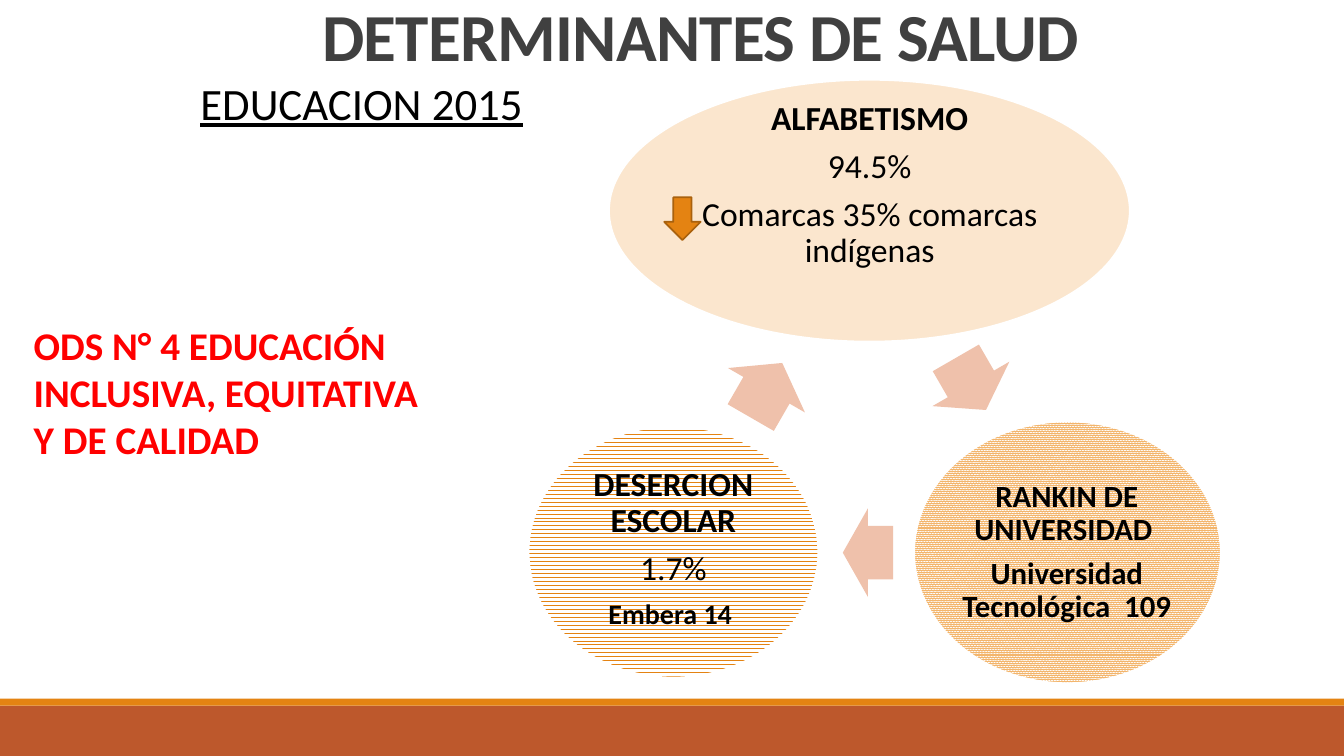
"""Build a slide on education as a determinant of health."""
from pptx import Presentation
from pptx import util as u
from pptx.dml.color import RGBColor
from pptx.enum import dml, shapes, text

FONT = "Calibri"
COLORS = {
    "band": "BD582C", "accent": "E48312", "accent_edge": "A9610D",
    "title": "404040", "ink": "000000", "goal": "FF0000", "white": "FFFFFF",
    "cream": "FBE6CE", "peach": "F3B56C", "cycle": "EFC1AB",
}
TITLE = "DETERMINANTES DE SALUD"
SUBTITLE = "EDUCACION 2015"
GOAL = "ODS N° 4 EDUCACIÓN INCLUSIVA, EQUITATIVA Y DE CALIDAD"

BANDS = [((0, 504, 960, 36), "band"), ((0, 499, 960, 5), "accent")]
TOPICS = [
    {"oval": (435, 57, 372, 187), "color": "cream", "pattern": None,
     "area": (489.5, 70.5, 263.5, 146), "anchor": text.MSO_ANCHOR.TOP,
     "lines": [("ALFABETISMO", 24, True), ("94.5%", 24, False),
               ("Comarcas 35% comarcas indígenas", 24, False)]},
    {"oval": (653, 301, 219, 187), "color": "peach",
     "pattern": dml.MSO_PATTERN.PERCENT_90,
     "area": (684.5, 328.5, 155, 132.5), "anchor": text.MSO_ANCHOR.MIDDLE,
     "lines": [("RANKIN DE UNIVERSIDAD ", 22, True),
               ("Universidad Tecnológica  109", 22, True)]},
    {"oval": (377.5, 304.5, 207, 179.5), "color": "accent",
     "pattern": dml.MSO_PATTERN.WAVE,
     "area": (407.5, 332, 147, 127), "anchor": text.MSO_ANCHOR.TOP,
     "lines": [("DESERCION ESCOLAR", 24, True), ("1.7%", 24, False),
               ("Embera 14 ", 20, True)]},
]
CYCLE_ARROWS = [((672, 242.5, 43, 63.5), 60), ((602, 363, 36, 63.5), 180),
                ((525, 247, 45, 63.5), 300)]
DROP_ARROW = (474.5, 141, 26, 30.5)


def color(name):
    return RGBColor.from_string(COLORS[name])


def points(place):
    return [u.Pt(value) for value in place]


def add_figure(page, preset, place, fill, edge=None, pattern=None):
    figure = page.shapes.add_shape(preset, *points(place))
    figure.shadow.inherit = False
    if pattern is None:
        figure.fill.solid()
    else:
        figure.fill.patterned()
        figure.fill.pattern = pattern
        figure.fill.back_color.rgb = color("white")
    figure.fill.fore_color.rgb = color(fill)
    if edge:
        figure.line.color.rgb = color(edge)
        figure.line.width = u.Pt(1.25)
    else:
        figure.line.fill.background()
    return figure


def add_span(para, words, size, ink, bold=False):
    span = para.add_run()
    span.text = words
    span.font.name = FONT
    span.font.size = u.Pt(size)
    span.font.bold = bold
    span.font.color.rgb = color(ink)
    return span


def add_box(page, place):
    box = page.shapes.add_textbox(*points(place))
    box.text_frame.word_wrap = True
    return box.text_frame


def add_title(page):
    title = page.shapes.title
    title.left, title.top, title.width, title.height = points((104.5, -57, 792, 114.5))
    frame = title.text_frame
    frame.auto_size = text.MSO_AUTO_SIZE.NONE
    frame.vertical_anchor = text.MSO_ANCHOR.BOTTOM
    para = frame.paragraphs[0]
    para.alignment = text.PP_ALIGN.CENTER
    para.line_spacing = 0.85
    para.space_before = u.Pt(0)
    span = add_span(para, TITLE, 48, "title", True)
    span.font._element.set("spc", "-50")


def add_topic(page, topic):
    add_figure(page, shapes.MSO_SHAPE.OVAL, topic["oval"], topic["color"],
               "white", topic["pattern"])
    frame = add_box(page, topic["area"])
    frame.vertical_anchor = topic["anchor"]
    frame.margin_left = frame.margin_right = u.Pt(2)
    frame.margin_top = frame.margin_bottom = u.Pt(2)
    for index, (words, size, bold) in enumerate(topic["lines"]):
        para = frame.add_paragraph() if index else frame.paragraphs[0]
        para.alignment = text.PP_ALIGN.CENTER
        para.line_spacing = 0.9
        para.space_after = u.Pt(round(size * 0.35, 1))
        add_span(para, words, size, "ink", bold)


def main():
    deck = Presentation()
    deck.slide_width, deck.slide_height = u.Pt(960), u.Pt(540)
    page = deck.slides.add_slide(deck.slide_layouts[5])
    for place, fill in BANDS:
        add_figure(page, shapes.MSO_SHAPE.RECTANGLE, place, fill)
    add_title(page)
    for topic in TOPICS:
        add_topic(page, topic)
    for place, angle in CYCLE_ARROWS:
        arrow = add_figure(page, shapes.MSO_SHAPE.RIGHT_ARROW, place, "cycle")
        arrow.rotation = angle
        arrow.adjustments[0] = 0.6
        arrow.adjustments[1] = 0.5
    subtitle = add_box(page, (136, 50.5, 343, 46))
    span = add_span(subtitle.paragraphs[0], SUBTITLE, 32, "ink")
    span.font.underline = True
    goal = add_box(page, (17, 226, 290, 109))
    add_span(goal.paragraphs[0], GOAL, 28, "goal", True)
    add_figure(page, shapes.MSO_SHAPE.DOWN_ARROW, DROP_ARROW, "accent", "accent_edge")
    deck.save("out.pptx")


if __name__ == "__main__":
    main()
